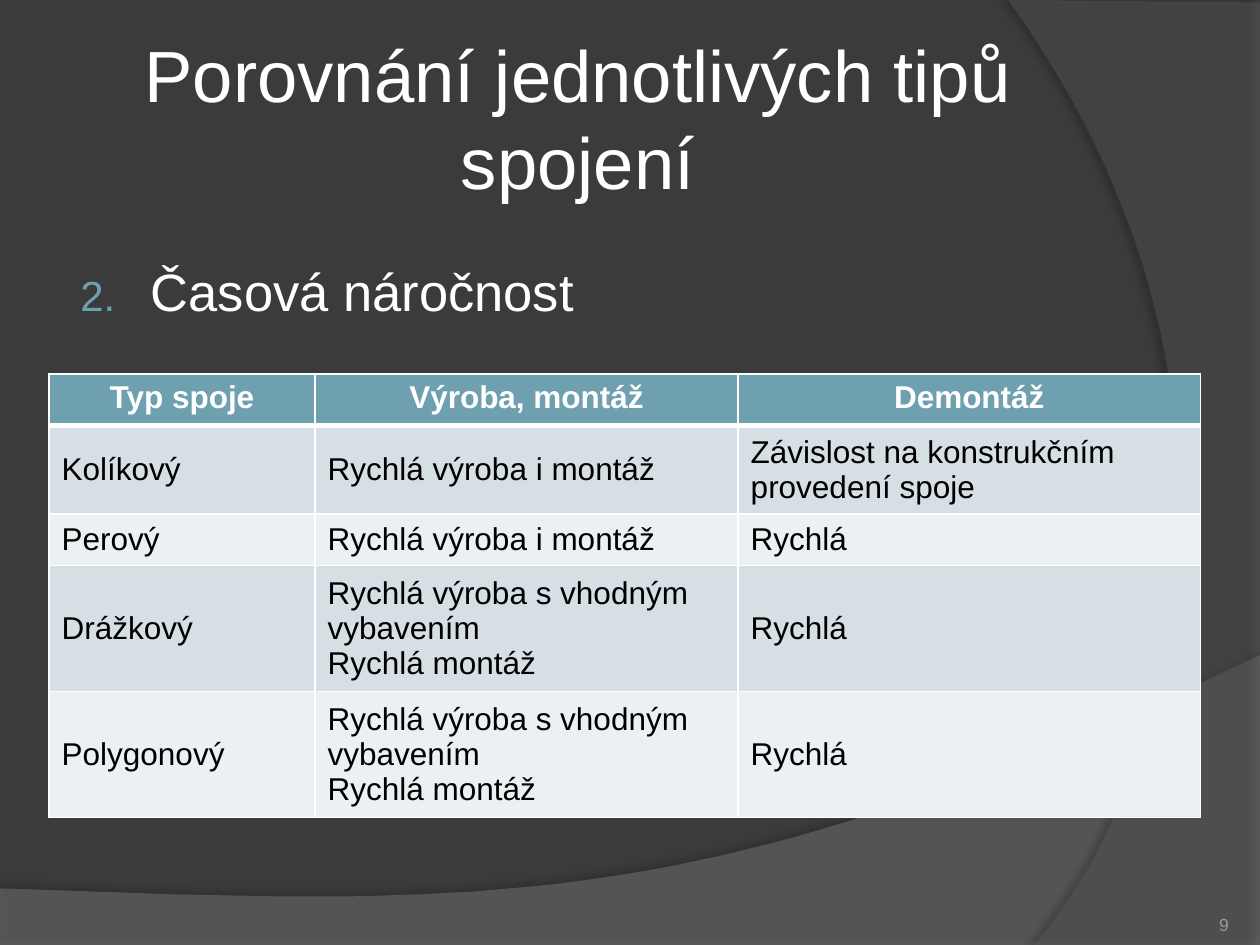
from dataclasses import dataclass

from lxml import etree
from pptx import Presentation
from pptx.dml.color import RGBColor
from pptx.enum.text import MSO_ANCHOR, PP_ALIGN
from pptx.oxml.ns import qn
from pptx.util import Cm, Pt

TOP, MIDDLE, BOTTOM = MSO_ANCHOR.TOP, MSO_ANCHOR.MIDDLE, MSO_ANCHOR.BOTTOM
LEFT, CENTER, RIGHT, JUSTIFY = PP_ALIGN.LEFT, PP_ALIGN.CENTER, PP_ALIGN.RIGHT, PP_ALIGN.JUSTIFY


@dataclass(frozen=True)
class Theme:
    """Colours, font and type sizes of the slide."""
    font: str = "Arial"
    background: str = "3B3B3B"
    wave: str = "7F7F7F"
    arc: str = "5E5E5E"
    accent: str = "6EA0B0"
    bands: tuple = ("D5DFE4", "EBF0F2")
    light: str = "FFFFFF"
    dark: str = "000000"
    muted: str = "9D9B9A"
    title: float = 41.4
    body: float = 30
    table: float = 18
    number: float = 10


THEME = Theme()
HEADERS = ["Typ spoje", "Výroba, montáž", "Demontáž"]
SLOW_SETUP = "Rychlá výroba s vhodným vybavením\nRychlá montáž"
JOINTS = [
    ["Kolíkový", "Rychlá výroba i montáž", "Závislost na konstrukčním provedení spoje"],
    ["Perový", "Rychlá výroba i montáž", "Rychlá"],
    ["Drážkový", SLOW_SETUP, "Rychlá"],
    ["Polygonový", SLOW_SETUP, "Rychlá"],
]
COLUMN_WIDTHS = [5.36, 8.53, 9.32]
ROW_HEIGHTS = [1.04, 1.66, 1.04, 2.39, 2.39]


def add_node(parent, tag, **attrs):
    """Append a DrawingML element and return it."""
    return etree.SubElement(parent, qn(tag), {k: str(v) for k, v in attrs.items()})


def bezier(p0, p1, p2, p3, steps=48):
    """Return points along a cubic curve, without its start."""
    ts = [i / steps for i in range(1, steps + 1)]
    return [tuple((1 - t) ** 3 * a + 3 * t * (1 - t) ** 2 * b + 3 * t * t * (1 - t) * c + t ** 3 * d
                  for a, b, c, d in zip(p0, p1, p2, p3)) for t in ts]


def style(p, size, color, align, bold=False):
    """Format a paragraph and its runs."""
    p.alignment = align
    for r in p.runs:
        r.font.name, r.font.size, r.font.bold = THEME.font, Pt(size), bold
        r.font.color.rgb = RGBColor.from_string(color)


def add_text(s, box, text, size, color, align, anchor, inset):
    """Add a one-paragraph text box and return its paragraph."""
    tf = s.shapes.add_textbox(*map(Cm, box)).text_frame
    tf.word_wrap, tf.vertical_anchor = True, anchor
    tf.margin_left = tf.margin_right = Cm(inset[0])
    tf.margin_top = tf.margin_bottom = Cm(inset[1])
    tf.text = text
    style(tf.paragraphs[0], size, color, align)
    return tf.paragraphs[0]


def add_swoosh(s, left, top, corners, curve, color, alpha, shadow):
    """Add a translucent shape with one curved side and a soft shadow."""
    points = [(x * 100, y * 100) for x, y in corners + bezier(*curve)]
    fb = s.shapes.build_freeform(*points[0], scale=Cm(0.01))
    fb.add_line_segments(points[1:], close=True)
    sp = fb.convert_to_shape(Cm(left), Cm(top))
    sp.fill.solid()
    sp.fill.fore_color.rgb = RGBColor.from_string(color)
    sp.line.fill.background()
    sp.shadow.inherit = False
    spPr = sp.element.spPr
    add_node(spPr.find(".//" + qn("a:srgbClr")), "a:alpha", val=alpha * 1000)
    shadow_alpha, blur, distance, angle = shadow
    outer = add_node(spPr.find(qn("a:effectLst")), "a:outerShdw", blurRad=Pt(blur),
                     dist=Pt(distance), dir=angle * 60000, algn="ctr", rotWithShape=0)
    clr = add_node(outer, "a:srgbClr", val=THEME.dark)
    add_node(clr, "a:alpha", val=shadow_alpha * 1000)


def add_backdrop(s):
    """Fill the background and add the bottom wave and the right arc."""
    s.background.fill.solid()
    s.background.fill.fore_color.rgb = RGBColor.from_string(THEME.background)
    add_swoosh(s, 0, 13.21, [(0, 4.7), (0, 5.87), (25.4, 5.87), (25.4, 0)],
               [(25.4, 0), (14.2, 5.31), (9.93, 5.05), (0, 4.7)],
               THEME.wave, 45, (35, 4, 3.5, 270))
    add_swoosh(s, 20.32, 0, [(5.08, 0.05), (5.08, 19.05), (0.53, 19.05)],
               [(0.53, 19.05), (3.43, 15.72), (5.54, 7.62), (0, 0)],
               THEME.arc, 40, (45, 4, 4, 180))


def add_numbered_item(s, box, text, start):
    """Add the numbered heading of the comparison."""
    p = add_text(s, box, text, THEME.body, THEME.light, JUSTIFY, TOP, (0.25, 0.13))
    p.line_spacing = 1.5
    pPr = p._p.get_or_add_pPr()
    pPr.set("marL", str(Cm(1.52)))
    pPr.set("indent", str(Cm(-1.42)))
    add_node(add_node(pPr, "a:buClr"), "a:srgbClr", val=THEME.accent)
    add_node(pPr, "a:buSzPct", val=80000)
    add_node(pPr, "a:buFont", typeface=THEME.font)
    add_node(pPr, "a:buAutoNum", type="arabicPeriod", startAt=start)


def set_borders(cell, bottom):
    """Draw white borders round a cell, with its own bottom width."""
    tcPr = cell._tc.get_or_add_tcPr()
    for i, (side, width) in enumerate(zip("LRTB", (1, 1, 1, bottom))):
        ln = etree.Element(qn("a:ln" + side), w=str(Pt(width)))
        add_node(add_node(ln, "a:solidFill"), "a:srgbClr", val=THEME.light)
        tcPr.insert(i, ln)


def add_joint_table(s, left, top):
    """Add the table that compares the joint types."""
    rows = [HEADERS] + JOINTS
    tbl = s.shapes.add_table(len(rows), len(HEADERS), Cm(left), Cm(top),
                             Cm(sum(COLUMN_WIDTHS)), Cm(sum(ROW_HEIGHTS))).table
    for col, width in zip(tbl.columns, COLUMN_WIDTHS):
        col.width = Cm(width)
    for i, (row, height) in enumerate(zip(rows, ROW_HEIGHTS)):
        head = i == 0
        tbl.rows[i].height = Cm(height)
        for j, text in enumerate(row):
            cell = tbl.cell(i, j)
            cell.text_frame.text = text
            cell.vertical_anchor = TOP if head else MIDDLE
            cell.fill.solid()
            fill = THEME.accent if head else THEME.bands[(i - 1) % 2]
            cell.fill.fore_color.rgb = RGBColor.from_string(fill)
            for p in cell.text_frame.paragraphs:
                style(p, THEME.table, THEME.light if head else THEME.dark,
                      CENTER if head else LEFT, head)
            set_borders(cell, 3 if head else 1)


def main():
    """Build the slide and save it."""
    prs = Presentation()
    prs.slide_width, prs.slide_height = Cm(25.4), Cm(19.05)
    s = prs.slides.add_slide(prs.slide_layouts[6])
    add_backdrop(s)
    add_text(s, (1.27, 0.76, 20.75, 3.18), "Porovnání jednotlivých tipů spojení",
             THEME.title, THEME.light, CENTER, MIDDLE, (0.13, 0.13))
    add_numbered_item(s, (1.27, 4.45, 20.75, 12.57), "Časová náročnost", 2)
    add_text(s, (22.66, 17.83, 2.11, 1.02), "9", THEME.number, THEME.muted, RIGHT, BOTTOM, (0, 0))
    add_joint_table(s, 0.99, 7.54)
    prs.save("out.pptx")


if __name__ == "__main__":
    main()
